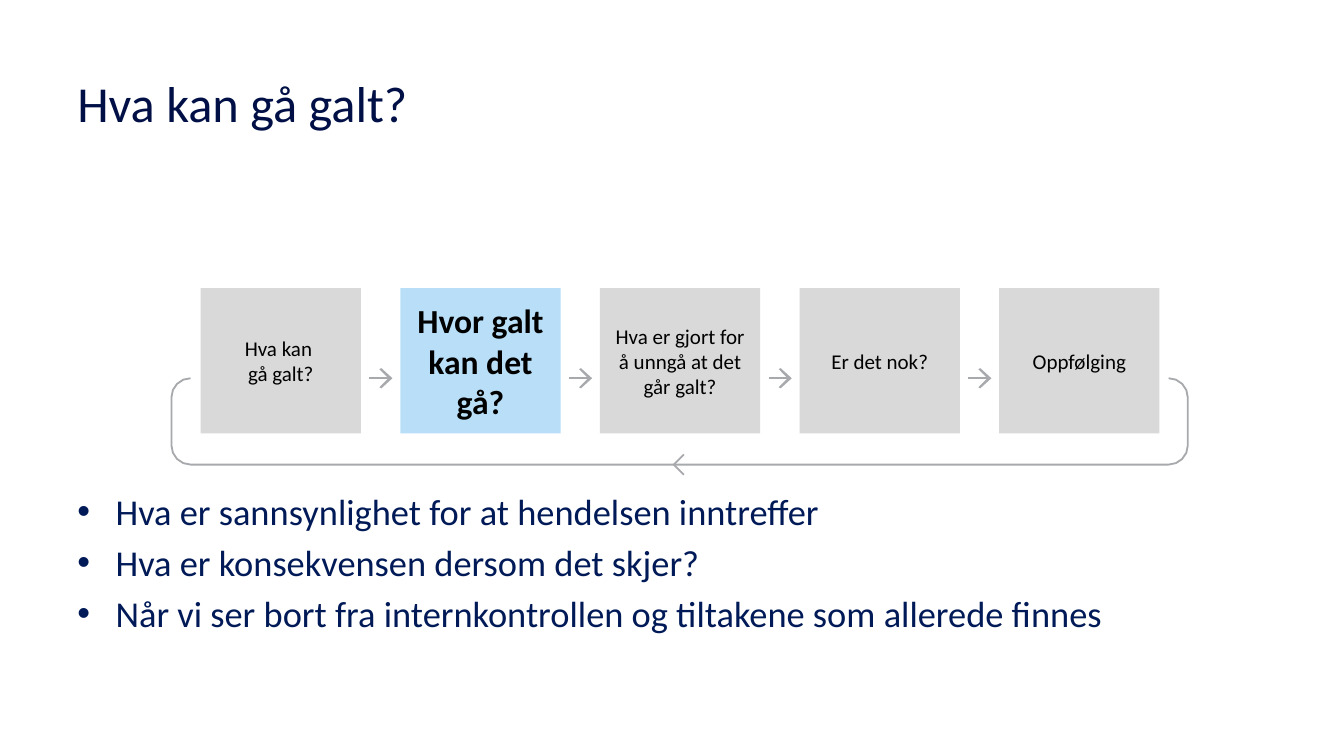
from math import cos, pi, sin

from lxml import etree
from pptx import Presentation
from pptx.dml.color import RGBColor
from pptx.enum.shapes import MSO_CONNECTOR, MSO_SHAPE
from pptx.enum.text import MSO_ANCHOR, MSO_AUTO_SIZE, PP_ALIGN
from pptx.oxml.ns import qn
from pptx.util import Inches, Pt

RECT, LINE = MSO_SHAPE.RECTANGLE, MSO_CONNECTOR.STRAIGHT
MID, TOP = MSO_ANCHOR.MIDDLE, MSO_ANCHOR.TOP
LEFT, CENTER = PP_ALIGN.LEFT, PP_ALIGN.CENTER
NO_FIT = MSO_AUTO_SIZE.NONE

WIDTH, HEIGHT = Inches(13.33), Inches(7.5)
GREY, PALE, BLUE = "A7A9AC", "D9D9D9", "B9DFF8"
AXIS, BASE = 0.62, 1.215  # rows of the arrows and of the return line

SMALL = {"name": "Calibri", "size": Pt(15), "bold": False}
LARGE = {"name": "Calibri", "size": Pt(24), "bold": True}
HEAD = {"name": "Calibri", "size": Pt(36), "bold": False}
LIST = {"name": "Calibri", "size": Pt(26), "bold": False}

STEPS = [
    (["Hva kan ", "gå galt?"], PALE, SMALL),
    (["Hvor galt kan det gå?"], BLUE, LARGE),
    (["Hva er gjort for å unngå at det går galt?"], PALE, SMALL),
    (["Er det nok?"], PALE, SMALL),
    (["Oppfølging"], PALE, SMALL),
]
POINTS = [
    "Hva er sannsynlighet for at hendelsen inntreffer",
    "Hva er konsekvensen dersom det skjer?",
    "Når vi ser bort fra internkontrollen og tiltakene som allerede finnes",
]


def col(n):
    return Inches(1.99 + 1.98 * n)


def row(n):
    return Inches(2.86 + 1.44 * n)


def color(code):
    return RGBColor.from_string(code)


def write(frame, lines, style, code, align, anchor, bullet=False):
    frame.word_wrap = True
    frame.auto_size = NO_FIT
    frame.vertical_anchor = anchor
    for i, line in enumerate(lines):
        para = frame.paragraphs[0] if i == 0 else frame.add_paragraph()
        para.alignment = align
        para.space_before = Pt(5.2 if bullet and i else 0)
        if bullet:
            props = para._p.get_or_add_pPr()
            props.set("marL", str(Inches(0.38)))
            props.set("indent", str(-Inches(0.38)))
            etree.SubElement(props, qn("a:buFont")).set("typeface", "Arial")
            etree.SubElement(props, qn("a:buChar")).set("char", "•")
        run = para.add_run()
        run.text = line
        for key, value in style.items():
            setattr(run.font, key, value)
        run.font.color.rgb = color(code)


def place(holder, top, height):
    holder.left, holder.width = int(WIDTH * 0.05), int(WIDTH * 0.9)
    holder.top, holder.height = int(HEIGHT * top), int(HEIGHT * height)


def box(slide, n, lines, fill, style):
    shape = slide.shapes.add_shape(RECT, col(n), row(0), Inches(1.59), row(1) - row(0))
    shape.shadow.inherit = False
    shape.fill.solid()
    shape.fill.fore_color.rgb = color(fill)
    shape.line.fill.background()
    write(shape.text_frame, lines, style, "000000", CENTER, MID)


def outline(slide, dots, filled=False):
    pen = slide.shapes.build_freeform(*dots[0], scale=1.0)
    pen.add_line_segments(dots[1:], close=filled)
    shape = pen.convert_to_shape()
    shape.shadow.inherit = False
    if filled:
        shape.fill.solid()
        shape.fill.fore_color.rgb = color(GREY)
        shape.line.fill.background()
    else:
        shape.fill.background()
        shape.line.color.rgb = color(GREY)
        shape.line.width = Pt(1.31)


def arrow(slide, n):
    x, y = col(n + 0.845), row(AXIS)
    shaft = slide.shapes.add_connector(LINE, x, y, x + Inches(0.2), y)
    shaft.line.color.rgb = color(GREY)
    shaft.line.width = Pt(1.19)
    etree.SubElement(shaft._element.spPr, qn("a:effectLst"))
    tip = [(0.12, -0.1), (0.1, -0.09), (0.19, 0), (0.1, 0.09), (0.12, 0.1), (0.23, 0)]
    outline(slide, [(x + Inches(dx), y + Inches(dy)) for dx, dy in tip], filled=True)


def bend(x, y, start):
    """Quarter circle around x, y, clockwise on the slide."""
    size = Inches(0.19)
    turns = [start + i * pi / 8 for i in range(5)]
    return [(int(x + size * cos(t)), int(y + size * sin(t))) for t in turns]


def loop(slide):
    size = Inches(0.19)
    left, right = col(-0.146) + size, col(4.945) - size
    high, low = row(AXIS) + size, row(BASE) - size
    dots = bend(right, high, -pi / 2) + bend(right, low, 0)
    dots += bend(left, low, pi / 2) + bend(left, high, pi)
    outline(slide, dots)
    x, y, arm = col(2.37), row(BASE), Inches(0.1)
    outline(slide, [(x + arm, y + arm), (x, y), (x + arm, y - arm)])


def main():
    deck = Presentation()
    deck.slide_width, deck.slide_height = WIDTH, HEIGHT
    slide = deck.slides.add_slide(deck.slide_layouts[1])

    # Title and list
    title, body = slide.shapes.title, slide.placeholders[1]
    place(title, 0.053, 0.165)
    place(body, 0.64, 0.22)
    write(title.text_frame, ["Hva kan gå galt?"], HEAD, "001046", LEFT, MID)
    write(body.text_frame, POINTS, LIST, "001A58", LEFT, TOP, bullet=True)

    # Process with its return line
    loop(slide)
    for n, step in enumerate(STEPS):
        box(slide, n, *step)
        if n < len(STEPS) - 1:
            arrow(slide, n)

    deck.save("out.pptx")


if __name__ == "__main__":
    main()
